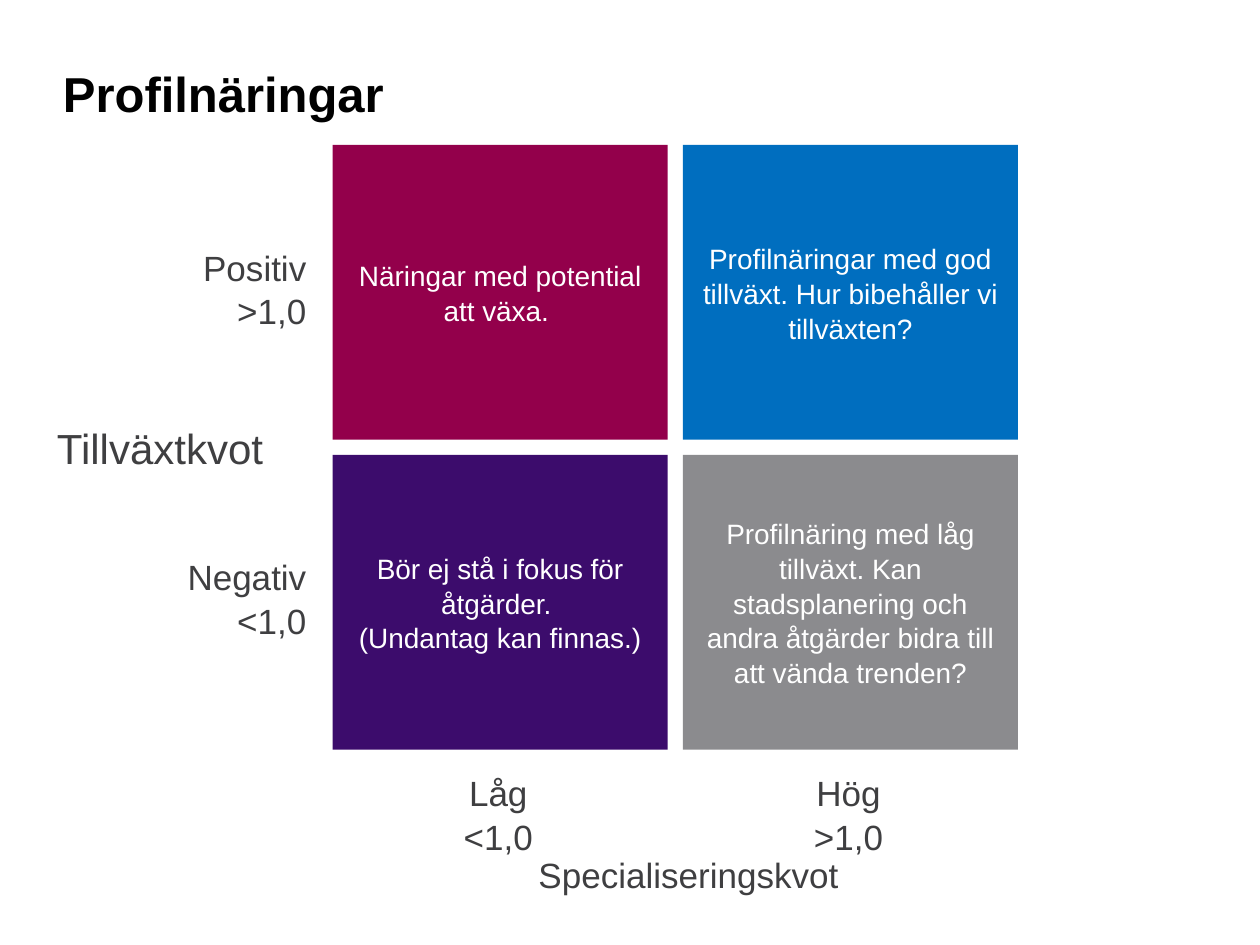
"""Build a slide with a two-by-two matrix of business profiles."""
from pptx import Presentation
from pptx.dml.color import RGBColor
from pptx.enum.shapes import MSO_SHAPE
from pptx.enum.text import MSO_ANCHOR, PP_ALIGN
from pptx.util import Inches, Pt

COLORS = {
    "title": "000000",
    "label": "3F3F41",
    "quadrant_text": "FFFFFF",
    "potential": "93004B",
    "growing": "006EBF",
    "low_priority": "3C0C6C",
    "declining": "8B8B8E",
}
LEFT, TOP = 2.64, 1.15
WIDTH, HEIGHT = 2.66, 2.34
COLUMN_STEP, ROW_STEP = 2.78, 2.46


def write(frame, paragraphs, size, color, align, bold=False, spacing=1.04):
    frame.word_wrap = True
    for index, content in enumerate(paragraphs):
        paragraph = frame.paragraphs[0] if index == 0 else frame.add_paragraph()
        paragraph.alignment = align
        paragraph.line_spacing = spacing
        for number, line in enumerate(content.split("\n")):
            if number:
                paragraph.add_line_break()
            run = paragraph.add_run()
            run.text = line
            run.font.name = "Arial"
            run.font.size = Pt(size)
            run.font.bold = bold
            run.font.color.rgb = RGBColor.from_string(COLORS[color])


prs = Presentation()
prs.slide_width, prs.slide_height = Inches(10), Inches(7.5)
slide = prs.slides.add_slide(prs.slide_layouts[6])

title = slide.shapes.add_textbox(Inches(0.5), Inches(0.5), Inches(9), Inches(0.91)).text_frame
title.margin_left = title.margin_right = title.margin_top = title.margin_bottom = 0
write(title, ["Profilnäringar"], 28, "title", PP_ALIGN.LEFT, bold=True, spacing=1)

quadrants = [
    (0, 0, "potential", "Näringar med potential att växa. "),
    (1, 0, "growing", "Profilnäringar med god tillväxt. Hur bibehåller vi tillväxten?"),
    (0, 1, "low_priority", "Bör ej stå i fokus för åtgärder. \n(Undantag kan finnas.)"),
    (1, 1, "declining", "Profilnäring med låg tillväxt. Kan stadsplanering och "
                        "andra åtgärder bidra till att vända trenden?"),
]
for column, row, fill, message in quadrants:
    quadrant = slide.shapes.add_shape(
        MSO_SHAPE.RECTANGLE,
        Inches(LEFT + column * COLUMN_STEP), Inches(TOP + row * ROW_STEP),
        Inches(WIDTH), Inches(HEIGHT))
    quadrant.shadow.inherit = False
    quadrant.fill.solid()
    quadrant.fill.fore_color.rgb = RGBColor.from_string(COLORS[fill])
    quadrant.line.fill.background()
    quadrant.text_frame.vertical_anchor = MSO_ANCHOR.MIDDLE
    write(quadrant.text_frame, [message], 16, "quadrant_text", PP_ALIGN.CENTER)

labels = [
    (0.28, 3.29, 1.98, 0.44, 24, PP_ALIGN.CENTER, ["Tillväxtkvot"]),
    (4.15, 6.71, 2.63, 0.53, 20, PP_ALIGN.CENTER, ["Specialiseringskvot"]),
]
for index, (growth, share) in enumerate([
    (["Positiv", ">1,0"], ["Låg", "<1,0"]),
    (["Negativ", "<1,0"], ["Hög", ">1,0"]),
]):
    labels.append((0.29, 1.89 + index * ROW_STEP, 2.24, 0.75, 20, PP_ALIGN.RIGHT, growth))
    labels.append((LEFT + index * COLUMN_STEP, 6.06, 2.63, 0.75, 20, PP_ALIGN.CENTER, share))

for left, top, width, height, size, align, lines in labels:
    label = slide.shapes.add_textbox(Inches(left), Inches(top), Inches(width), Inches(height))
    write(label.text_frame, lines, size, "label", align)

prs.save("out.pptx")
